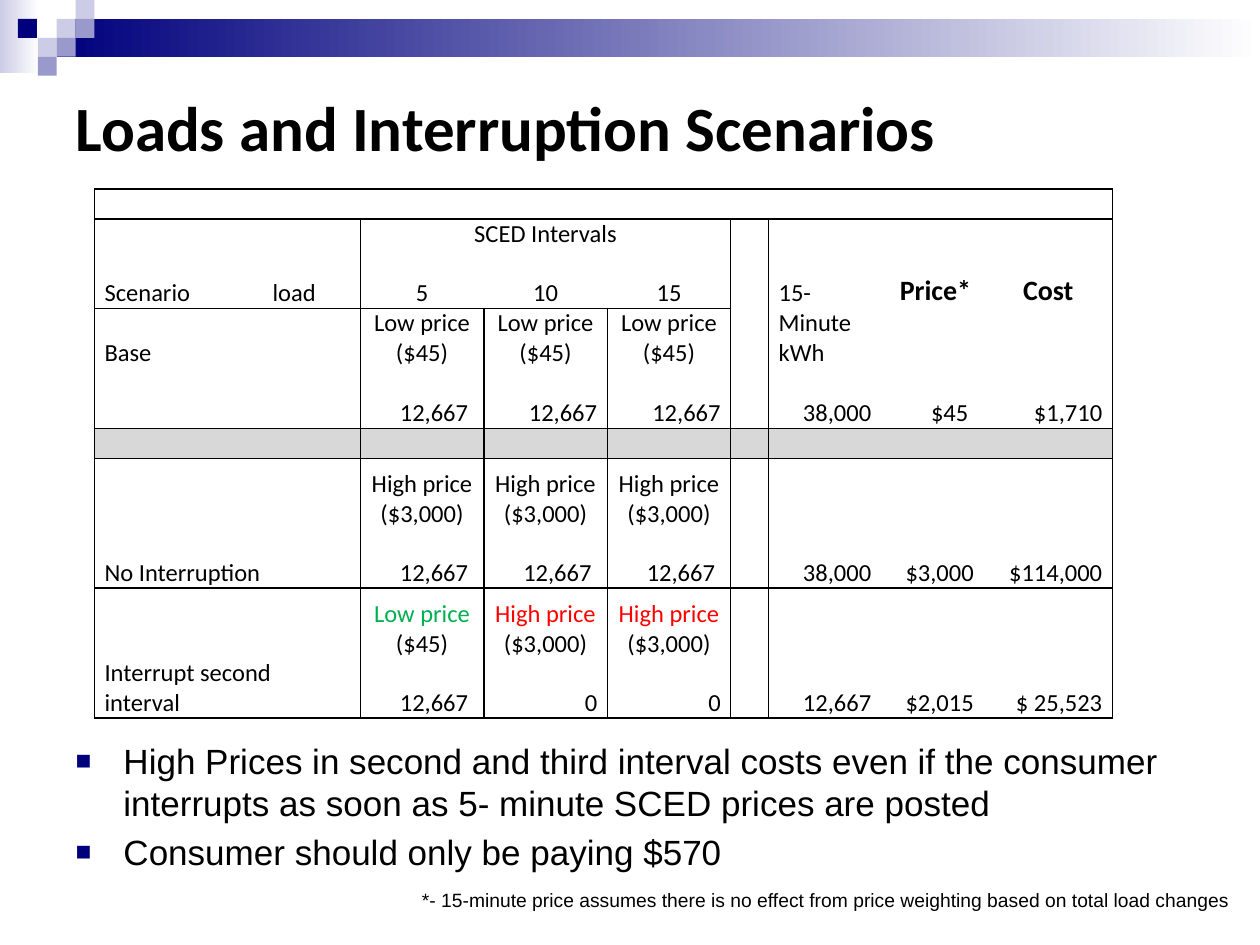
import lxml.etree
import pptx
import pptx.dml.color
import pptx.enum.shapes
import pptx.enum.text
import pptx.oxml.ns
import pptx.util

RGB = pptx.dml.color.RGBColor
IN = pptx.util.Inches
ANCHOR = pptx.enum.text.MSO_ANCHOR
ALIGN = pptx.enum.text.PP_ALIGN
BLACK, WHITE = RGB(0, 0, 0), RGB(255, 255, 255)
NAVY, PERIWINKLE, LAVENDER = RGB(0, 0, 0x7D), RGB(0x99, 0x99, 0xCC), RGB(0xCC, 0xCC, 0xE6)
GRAY, GREEN, RED = RGB(0xD8, 0xD8, 0xD8), RGB(0, 0xB0, 0x50), RGB(255, 0, 0)

SQUARE = 0.15
SQUARES = [(3, 1, LAVENDER), (4, 0, LAVENDER), (4, 1, PERIWINKLE), (2, 2, LAVENDER),
           (0.95, 1, NAVY), (3, 2, PERIWINKLE), (2, 3, PERIWINKLE)]

COLS = [1.06, 1.05, 0.98, 0.98, 0.98, 0.3, 0.94, 0.77, 1.02]
ROWS = [0.23, 0.24, 0.47, 0.47, 0.48, 0.23, 0.56, 0.47, 0.56, 0.47]
SPACER_ROW = 5
SPANS = [(0, 1, 0, 4), (1, 2, 1, 4), (2, 6, 3, 6)] + [(r, 0, r, 1) for r in (6, 7, 8, 9)]
LOW, HIGH = "Low price ($45)", "High price ($3,000)"
TEXTS = {
    1: ["", "", "SCED Intervals"],
    2: ["Scenario", "load", "5", "10", "15", "", "15- Minute kWh", "Price*", "Cost"],
    3: ["Base", "", LOW, LOW, LOW],
    4: ["", "", "12,667 ", "12,667", "12,667", "", "38,000 ", "$45 ", "$1,710"],
    6: ["", "", HIGH, HIGH, HIGH],
    7: ["No Interruption", "", "12,667 ", "12,667 ", "12,667 ", "", "38,000 ", "$3,000", "$114,000"],
    8: ["", "", LOW, HIGH, HIGH],
    9: ["Interrupt second interval", "", "12,667 ", "0", "0", "", "12,667 ", "$2,015", "$ 25,523"],
}
AMOUNT_ROWS = (4, 7, 9)


def add_run(p, text, size=14, font="Calibri", color=BLACK, bold=False):
    """Append a formatted run to a paragraph."""
    r = p.add_run()
    r.text = text
    r.font.size, r.font.name, r.font.bold = pptx.util.Pt(size), font, bold
    r.font.color.rgb = color


def add_rect(s, x, y, w, h, *colors):
    """Draw a borderless rectangle, solid or with a left-to-right gradient."""
    sp = s.shapes.add_shape(pptx.enum.shapes.MSO_SHAPE.RECTANGLE, IN(x), IN(y), IN(w), IN(h))
    sp.shadow.inherit = False
    sp.line.fill.background()
    if len(colors) == 1:
        sp.fill.solid()
        sp.fill.fore_color.rgb = colors[0]
        return
    sp.fill.gradient()
    sp.fill.gradient_angle = 0
    for stop, color, position in zip(sp.fill.gradient_stops, colors, (0, 1)):
        stop.color.rgb, stop.position = color, position


def place(sp, x, y, w, h):
    """Move and size a shape in inches."""
    sp.left, sp.top, sp.width, sp.height = IN(x), IN(y), IN(w), IN(h)


def add_bullet(p, color, char="■"):
    """Give a paragraph a hanging square bullet."""
    pPr = p._p.get_or_add_pPr()
    pPr.set("marL", str(IN(0.38)))
    pPr.set("indent", str(-IN(0.38)))
    clr = lxml.etree.SubElement(pPr, pptx.oxml.ns.qn("a:buClr"))
    lxml.etree.SubElement(clr, pptx.oxml.ns.qn("a:srgbClr"), val=str(color))
    lxml.etree.SubElement(pPr, pptx.oxml.ns.qn("a:buSzPct"), val="75000")
    lxml.etree.SubElement(pPr, pptx.oxml.ns.qn("a:buFont"), typeface="Arial")
    lxml.etree.SubElement(pPr, pptx.oxml.ns.qn("a:buChar"), char=char)


def has_left(r, c):
    """Tell whether a vertical rule stands at the left of a cell."""
    if r == 0:
        return c in (0, 9)
    return c in (0, 2, 5, 6, 9) or (r >= 3 and c in (3, 4))


def has_bottom(r, c):
    """Tell whether a horizontal rule lies under a cell."""
    return r in (-1, 0, 4, 5, 7, 9) or (r == 2 and c < 5)


def set_borders(cell, r, c):
    """Draw the four edges of a cell by the table's ruling."""
    tcPr = cell._tc.get_or_add_tcPr()
    edges = {"a:lnL": has_left(r, c), "a:lnR": has_left(r, c + 1),
             "a:lnT": has_bottom(r - 1, c), "a:lnB": has_bottom(r, c)}
    for tag, shown in edges.items():
        ln = lxml.etree.SubElement(tcPr, pptx.oxml.ns.qn(tag), w=str(pptx.util.Pt(1)))
        fill = lxml.etree.SubElement(ln, pptx.oxml.ns.qn("a:solidFill" if shown else "a:noFill"))
        if shown:
            lxml.etree.SubElement(fill, pptx.oxml.ns.qn("a:srgbClr"), val=str(BLACK))


def fill_cell(cell, r, c, text):
    """Format a cell and write its text."""
    set_borders(cell, r, c)
    cell.fill.solid()
    cell.fill.fore_color.rgb = GRAY if r == SPACER_ROW else WHITE
    cell.margin_left = cell.margin_right = IN(0.08)
    cell.margin_top = cell.margin_bottom = 0
    cell.vertical_anchor = ANCHOR.BOTTOM
    p = cell.text_frame.paragraphs[0]
    if not text:
        lxml.etree.SubElement(p._p, pptx.oxml.ns.qn("a:endParaRPr"), sz="1400")
        return
    if c == 0 or text.startswith("15-"):
        p.alignment = ALIGN.LEFT
    else:
        p.alignment = ALIGN.RIGHT if r in AMOUNT_ROWS else ALIGN.CENTER
    if r == 8:
        label, price = text.split("(")
        add_run(p, label, color=GREEN if text == LOW else RED)
        add_run(p, "(" + price)
    elif r == 2 and c > 6:
        add_run(p, text, size=16, bold=True)
    else:
        add_run(p, text)


def add_scenarios(s):
    """Build the table of scenarios."""
    tbl = s.shapes.add_table(len(ROWS), len(COLS), IN(0.75), IN(1.5),
                             IN(sum(COLS)), IN(sum(ROWS))).table
    tbl.first_row = tbl.horz_banding = False
    for col, w in zip(tbl.columns, COLS):
        col.width = IN(w)
    for row, h in zip(tbl.rows, ROWS):
        row.height = IN(h)
    for r in range(len(ROWS)):
        texts = TEXTS.get(r, [])
        for c in range(len(COLS)):
            fill_cell(tbl.cell(r, c), r, c, texts[c] if c < len(texts) else "")
    for r1, c1, r2, c2 in SPANS:
        tbl.cell(r1, c1).merge(tbl.cell(r2, c2))


def add_header(s):
    """Draw the gradient band and its squares."""
    add_rect(s, 0, 0, 0.31, 0.58, LAVENDER, WHITE)
    add_rect(s, 0.45, SQUARE, 9.55, 2 * SQUARE, NAVY, WHITE)
    for col, row, color in SQUARES:
        add_rect(s, col * SQUARE, row * SQUARE, SQUARE, SQUARE, color)


def add_title(s, text):
    """Write the title."""
    sp = s.shapes.title
    place(sp, 0.5, 0.5, 9, 1)
    sp.text_frame.vertical_anchor = ANCHOR.MIDDLE
    p = sp.text_frame.paragraphs[0]
    p.alignment = ALIGN.LEFT
    add_run(p, text, size=36, bold=True)


def add_points(s, points):
    """Write the bulleted list."""
    sp = s.placeholders[1]
    place(sp, 0.5, 5.82, 9.18, 1.18)
    tf = sp.text_frame
    for i, text in enumerate(points):
        p = tf.add_paragraph() if i else tf.paragraphs[0]
        add_bullet(p, NAVY)
        p.space_before = pptx.util.Pt(4 if i else 0)
        add_run(p, text, size=20, font="Arial")


def add_footnote(s, text):
    """Write the footnote."""
    tf = s.shapes.add_textbox(IN(3.25), IN(7), IN(6.65), IN(0.29)).text_frame
    tf.word_wrap = False
    add_run(tf.paragraphs[0], text, size=11, font="Arial")


def main():
    """Build the slide and save it."""
    prs = pptx.Presentation()
    prs.slide_width, prs.slide_height = IN(10), IN(7.5)
    s = prs.slides.add_slide(prs.slide_layouts[1])
    add_header(s)
    add_title(s, "Loads and Interruption Scenarios")
    add_scenarios(s)
    add_footnote(s, "*- 15-minute price assumes there is no effect from price weighting "
                    "based on total load changes")
    add_points(s, ["High Prices in second and third interval costs even if the consumer "
                   "interrupts as soon as 5- minute SCED prices are posted",
                   "Consumer should only be paying $570"])
    prs.save("out.pptx")


if __name__ == "__main__":
    main()
